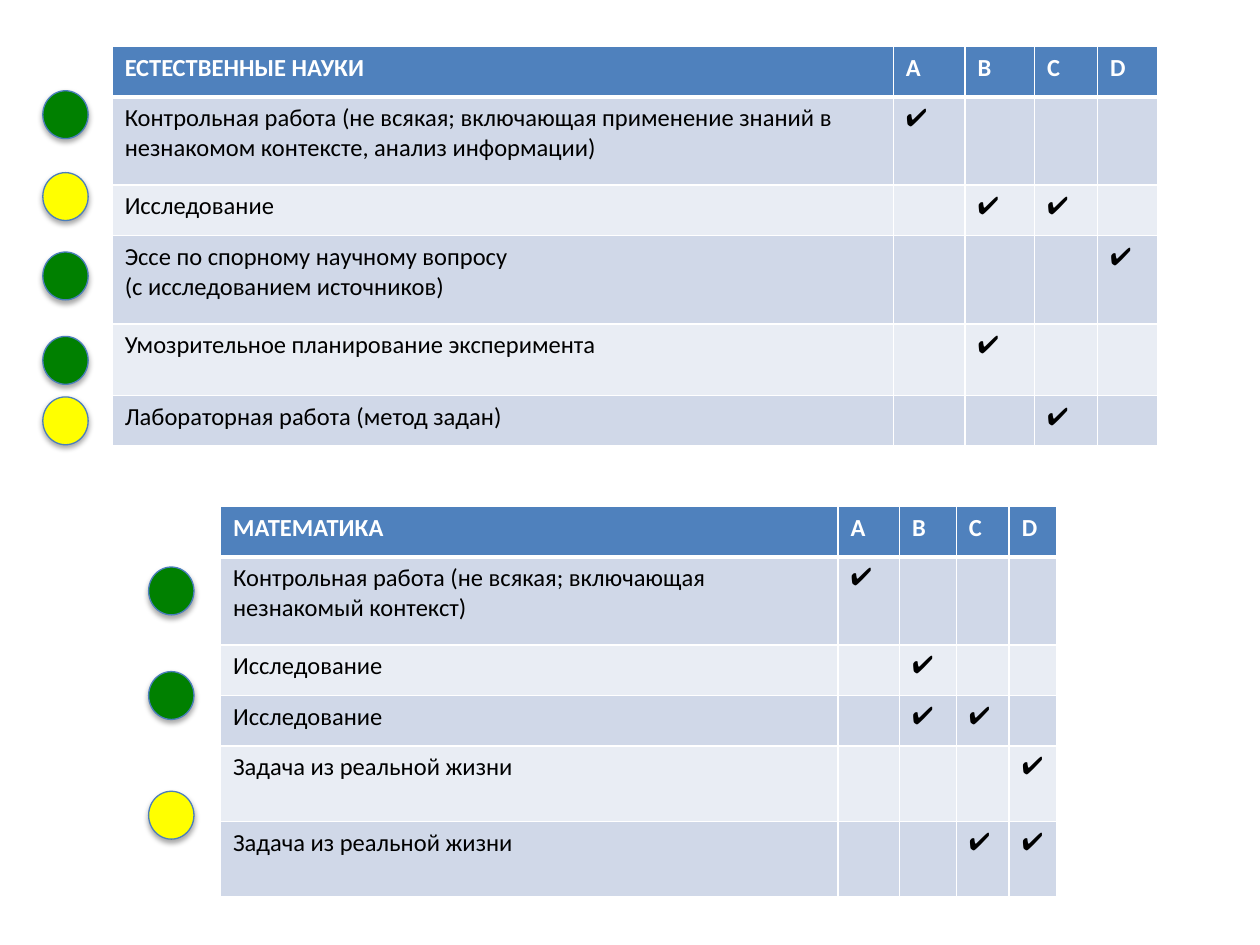
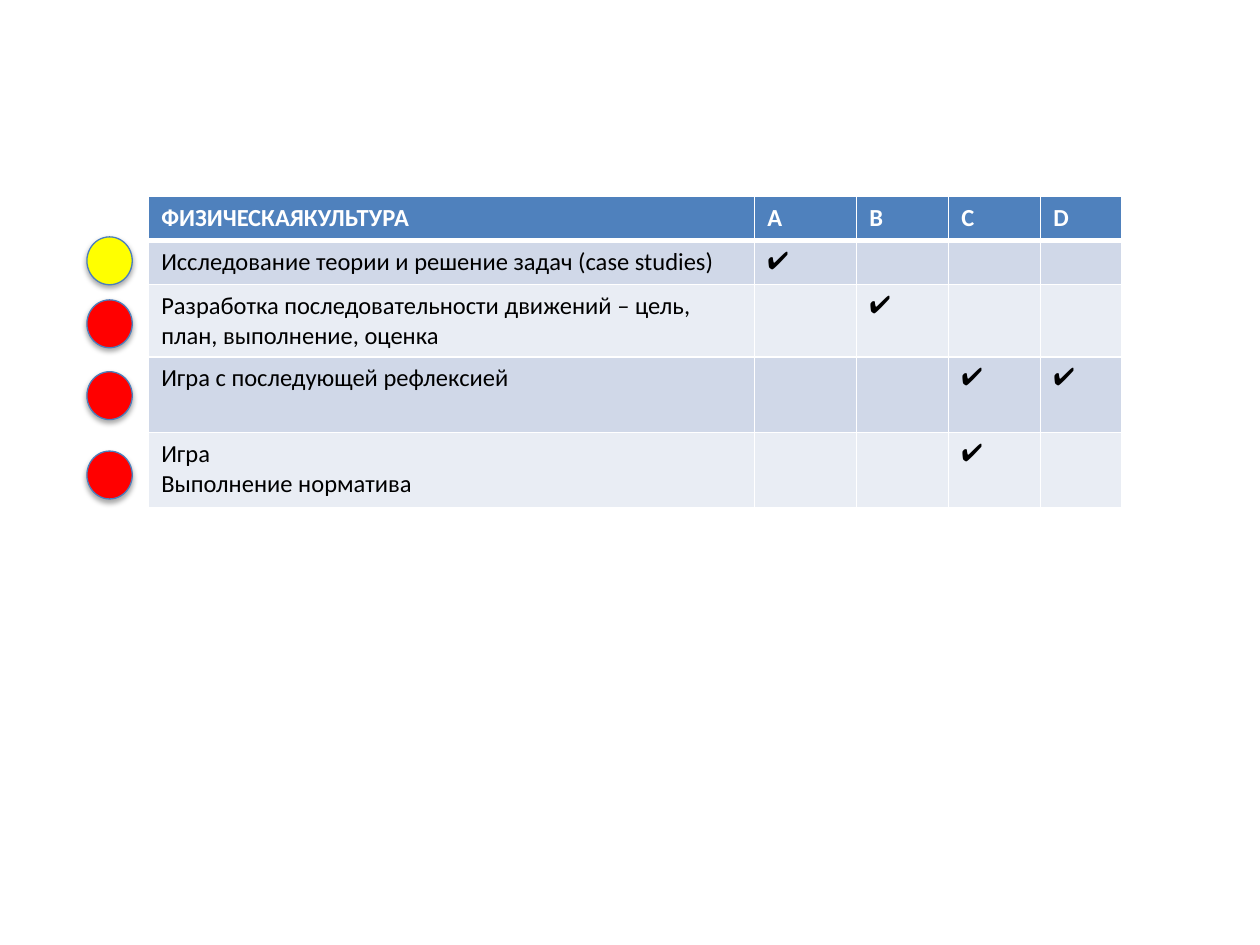
from lxml import etree
from pptx import Presentation
from pptx.dml.color import RGBColor
from pptx.enum import shapes
from pptx.oxml import ns, parse_xml
from pptx.util import Inches, Pt

HEADER_BLUE = RGBColor(0x4F, 0x81, 0xBD)
BAND_DARK = RGBColor(0xD0, 0xD8, 0xE8)
BAND_LIGHT = RGBColor(0xE9, 0xED, 0xF4)
OUTLINE_BLUE = RGBColor(0x4B, 0x7E, 0xBC)
GREEN = RGBColor(0x00, 0x80, 0x00)
YELLOW = RGBColor(0xFF, 0xFF, 0x00)
RED = RGBColor(0xFF, 0x00, 0x00)
WHITE = RGBColor(0xFF, 0xFF, 0xFF)
BLACK = RGBColor(0x00, 0x00, 0x00)

FONT = "Calibri"
TEXT_SIZE = Pt(14)
CRITERIA = "ABCD"
CHECK = "✔"
LIGHT_WIDTH, LIGHT_HEIGHT = 0.36, 0.38

SCIENCE = {
    "title": "ЕСТЕСТВЕННЫЕ НАУКИ",
    "position": (0.89, 0.37),
    "columns": (6.2, 0.57, 0.55, 0.5, 0.48),
    "header_height": 0.4,
    "check_font": FONT,
    "tasks": [
        ("Контрольная работа (не всякая; включающая применение знаний в "
         "незнакомом контексте, анализ информации)", "A", 0.7),
        ("Исследование", "BC", 0.4),
        ("Эссе по спорному научному вопросу\n(с исследованием источников)", "D", 0.7),
        ("Умозрительное планирование эксперимента", "B", 0.57),
        ("Лабораторная работа (метод задан)", "C", 0.4),
    ],
    "lights_left": 0.34,
    "lights": [(0.72, GREEN), (1.37, YELLOW), (2.0, GREEN), (2.67, GREEN), (3.15, YELLOW)],
}
MATHEMATICS = {
    "title": "МАТЕМАТИКА",
    "position": (1.75, 4.02),
    "columns": (4.9, 0.49, 0.45, 0.42, 0.38),
    "header_height": 0.4,
    "check_font": "Arial",
    "tasks": [
        ("Контрольная работа (не всякая; включающая незнакомый контекст)", "A", 0.7),
        ("Исследование", "B", 0.4),
        ("Исследование", "BC", 0.4),
        ("Задача из реальной жизни", "D", 0.6),
        ("Задача из реальной жизни", "CD", 0.6),
    ],
    "lights_left": 1.18,
    "lights": [(4.5, GREEN), (5.33, GREEN), (6.28, YELLOW)],
}
PHYSICAL_EDUCATION = {
    "title": "ФИЗИЧЕСКАЯКУЛЬТУРА",
    "position": (1.18, 1.56),
    "columns": (4.81, 0.81, 0.73, 0.73, 0.64),
    "header_height": 0.35,
    "check_font": "Arial",
    "tasks": [
        ("Исследование теории и решение задач (case studies)", "A", 0.35),
        ("Разработка последовательности движений – цель, план, выполнение, оценка", "B", 0.57),
        ("Игра с последующей рефлексией", "CD", 0.6),
        ("Игра\nВыполнение норматива", "C", 0.6),
    ],
    "lights_left": 0.69,
    "lights": [(1.88, YELLOW), (2.38, RED), (2.95, RED), (3.58, RED)],
}
SLIDES = [[SCIENCE, MATHEMATICS], [PHYSICAL_EDUCATION]]

SHADOW = (
    f'<a:effectLst {ns.nsdecls("a")}>'
    f'<a:outerShdw blurRad="{Pt(3.1)}" dist="{Pt(1.8)}" dir="5400000" rotWithShape="0">'
    '<a:srgbClr val="000000"><a:alpha val="35000"/></a:srgbClr>'
    '</a:outerShdw></a:effectLst>'
)


def add_borders(cell, row):
    """Draw white cell borders, thick between the header and the first task."""
    properties = cell._tc.get_or_add_tcPr()
    widths = {"lnL": 1, "lnR": 1, "lnT": 3 if row == 1 else 1, "lnB": 3 if row == 0 else 1}
    for side, width in widths.items():
        line = etree.SubElement(properties, ns.qn(f"a:{side}"), w=str(Pt(width)))
        fill = etree.SubElement(line, ns.qn("a:solidFill"))
        etree.SubElement(fill, ns.qn("a:srgbClr"), val=str(WHITE))


def format_cell(cell, row, value, font_name):
    """Fill one cell and set its text, keeping empty cells at the text size."""
    add_borders(cell, row)
    cell.fill.solid()
    cell.fill.fore_color.rgb = HEADER_BLUE if row == 0 else (BAND_LIGHT, BAND_DARK)[row % 2]
    cell.text_frame.text = value
    for paragraph in cell.text_frame.paragraphs:
        for run in paragraph.runs:
            run.font.name = font_name
            run.font.size = TEXT_SIZE
            run.font.bold = row == 0
            run.font.color.rgb = WHITE if row == 0 else BLACK
        if not paragraph.runs:
            etree.SubElement(paragraph._p, ns.qn("a:endParaRPr"), sz=str(int(TEXT_SIZE.pt * 100)))


def add_subject_table(slide, subject):
    """Add a table of tasks with check marks under the assessed criteria."""
    rows = [[subject["title"], *CRITERIA]]
    rows += [[task] + [CHECK if letter in marks else "" for letter in CRITERIA]
             for task, marks, _ in subject["tasks"]]
    heights = [subject["header_height"]] + [height for _, _, height in subject["tasks"]]
    widths = subject["columns"]
    left, top = subject["position"]
    table = slide.shapes.add_table(
        len(rows), len(widths), Inches(left), Inches(top),
        Inches(sum(widths)), Inches(sum(heights))).table
    for column, width in zip(table.columns, widths):
        column.width = Inches(width)
    for row, (values, height) in enumerate(zip(rows, heights)):
        table.rows[row].height = Inches(height)
        for column, value in enumerate(values):
            font_name = subject["check_font"] if value == CHECK else FONT
            format_cell(table.cell(row, column), row, value, font_name)


def add_lights(slide, subject):
    """Add the column of traffic lights beside a table."""
    for top, color in subject["lights"]:
        light = slide.shapes.add_shape(
            shapes.MSO_SHAPE.OVAL, Inches(subject["lights_left"]), Inches(top),
            Inches(LIGHT_WIDTH), Inches(LIGHT_HEIGHT))
        light.fill.solid()
        light.fill.fore_color.rgb = color
        light.line.color.rgb = OUTLINE_BLUE
        light.line.width = Pt(0.75)
        light._element.spPr.append(parse_xml(SHADOW))


def main():
    """Build the assessment slides and save them."""
    presentation = Presentation()
    presentation.slide_width, presentation.slide_height = Inches(10), Inches(7.5)
    for subjects in SLIDES:
        slide = presentation.slides.add_slide(presentation.slide_layouts[6])
        for subject in subjects:
            add_subject_table(slide, subject)
            add_lights(slide, subject)
    presentation.save("out.pptx")


if __name__ == "__main__":
    main()
